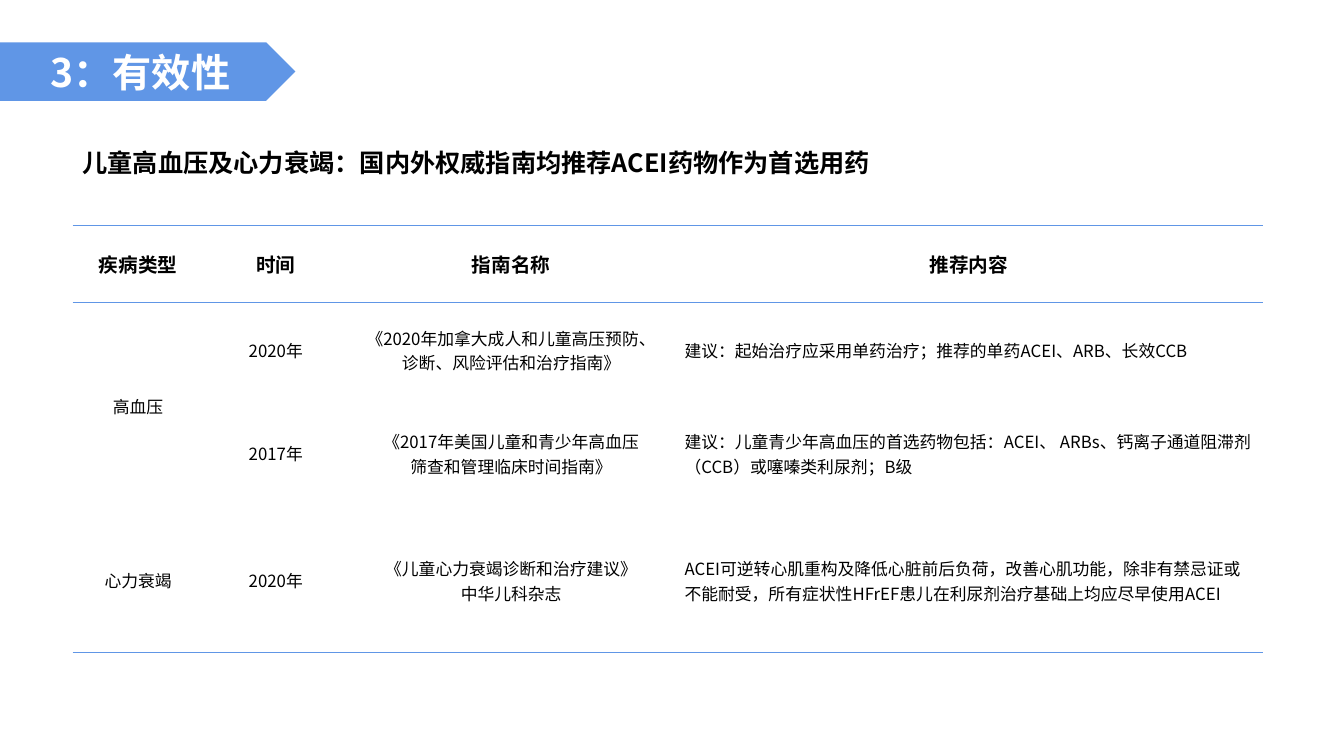
"""Build the efficacy slide with its table of guideline recommendations."""
from lxml import etree
from pptx import Presentation
from pptx.dml.color import RGBColor
from pptx.enum.shapes import MSO_SHAPE
from pptx.enum.text import MSO_ANCHOR, MSO_AUTO_SIZE, PP_ALIGN
from pptx.oxml.ns import qn
from pptx.util import Inches, Pt

PENTAGON = MSO_SHAPE.PENTAGON
MIDDLE = MSO_ANCHOR.MIDDLE
GROW = MSO_AUTO_SIZE.SHAPE_TO_FIT_TEXT
LEFT, CENTER, JUSTIFY = PP_ALIGN.LEFT, PP_ALIGN.CENTER, PP_ALIGN.JUSTIFY
FONT = "Noto Sans CJK SC"
COLORS = {"blue": "6096E6", "black": "000000", "white": "FFFFFF"}
NO_STYLE = "{2D5ABB26-0587-4C30-8999-92F81FD0307C}"
COLUMN_WIDTHS = [1.3, 1.43, 3.24, 5.84]
ROW_HEIGHTS = [0.76, 0.95, 1.1, 1.42]
GUIDELINES = [
    ["疾病类型", "时间", "指南名称", "推荐内容"],
    ["高血压", "2020年", "《2020年加拿大成人和儿童高压预防、\n诊断、风险评估和治疗指南》",
     "建议：起始治疗应采用单药治疗；推荐的单药ACEI、ARB、长效CCB"],
    ["", "2017年", "《2017年美国儿童和青少年高血压\n筛查和管理临床时间指南》",
     "建议：儿童青少年高血压的首选药物包括：ACEI、 ARBs、钙离子通道阻滞剂（CCB）或噻嗪类利尿剂；B级"],
    ["心力衰竭", "2020年", "《儿童心力衰竭诊断和治疗建议》\n中华儿科杂志",
     "ACEI可逆转心肌重构及降低心脏前后负荷，改善心肌功能，除非有禁忌证或不能耐受，"
     "所有症状性HFrEF患儿在利尿剂治疗基础上均应尽早使用ACEI"],
]
BORDERS = {0: ["a:lnT", "a:lnB"], 3: ["a:lnB"]}


def write_text(text_frame, text, size, color, bold, alignment):
    """Fill a text frame and format all of its runs alike."""
    text_frame.text = text
    for paragraph in text_frame.paragraphs:
        paragraph.alignment = alignment
        for run in paragraph.runs:
            run.font.size = Pt(size)
            run.font.bold = bold
            run.font.color.rgb = RGBColor.from_string(COLORS[color])
            run.font.name = FONT
            east_asian = etree.SubElement(run.font._element, qn("a:ea"))
            east_asian.set("typeface", FONT)


def add_banner(slide, text):
    """Add the arrow-shaped section banner at the left edge."""
    shape = slide.shapes.add_shape(
        PENTAGON, Inches(0), Inches(0.42), Inches(2.93), Inches(0.58))
    shape.shadow.inherit = False
    shape.fill.solid()
    shape.fill.fore_color.rgb = RGBColor.from_string(COLORS["blue"])
    shape.line.fill.background()
    shape.text_frame.vertical_anchor = MIDDLE
    write_text(shape.text_frame, text, 28, "white", True, CENTER)


def add_heading(slide, text):
    """Add the bold statement above the table."""
    shape = slide.shapes.add_textbox(
        Inches(0.72), Inches(1.26), Inches(11.12), Inches(0.56))
    shape.text_frame.word_wrap = True
    shape.text_frame.auto_size = GROW
    write_text(shape.text_frame, text, 18, "black", True, JUSTIFY)
    shape.text_frame.paragraphs[0].line_spacing = 1.5


def add_border(cell, side):
    """Draw a one-point blue line on one side of a cell."""
    line = etree.SubElement(cell._tc.get_or_add_tcPr(), qn(side), w=str(Pt(1)))
    fill = etree.SubElement(line, qn("a:solidFill"))
    etree.SubElement(fill, qn("a:srgbClr"), val=COLORS["blue"])


def add_guideline_table(slide):
    """Add the table with ruled header and closing line."""
    frame = slide.shapes.add_table(
        len(ROW_HEIGHTS), len(COLUMN_WIDTHS), Inches(0.72), Inches(2.24),
        Inches(sum(COLUMN_WIDTHS)), Inches(sum(ROW_HEIGHTS)))
    table = frame.table
    table.horz_banding = False
    table._tbl.tblPr.find(qn("a:tableStyleId")).text = NO_STYLE
    for column, width in zip(table.columns, COLUMN_WIDTHS):
        column.width = Inches(width)
    for row, height in zip(table.rows, ROW_HEIGHTS):
        row.height = Inches(height)
    for row_index, texts in enumerate(GUIDELINES):
        header = row_index == 0
        for column_index, text in enumerate(texts):
            cell = table.cell(row_index, column_index)
            cell.vertical_anchor = MIDDLE
            alignment = LEFT if column_index == 3 and not header else CENTER
            write_text(cell.text_frame, text, 14 if header else 12,
                       "black", header, alignment)
            for side in BORDERS.get(row_index, []):
                add_border(cell, side)
            cell.fill.background()
    table.cell(1, 0).merge(table.cell(2, 0))


def main():
    """Create the presentation and save it."""
    presentation = Presentation()
    presentation.slide_width = Inches(13.33)
    presentation.slide_height = Inches(7.5)
    slide = presentation.slides.add_slide(presentation.slide_layouts[6])
    add_banner(slide, "3：有效性")
    add_guideline_table(slide)
    add_heading(slide, "儿童高血压及心力衰竭：国内外权威指南均推荐ACEI药物作为首选用药")
    presentation.save("out.pptx")


if __name__ == "__main__":
    main()
